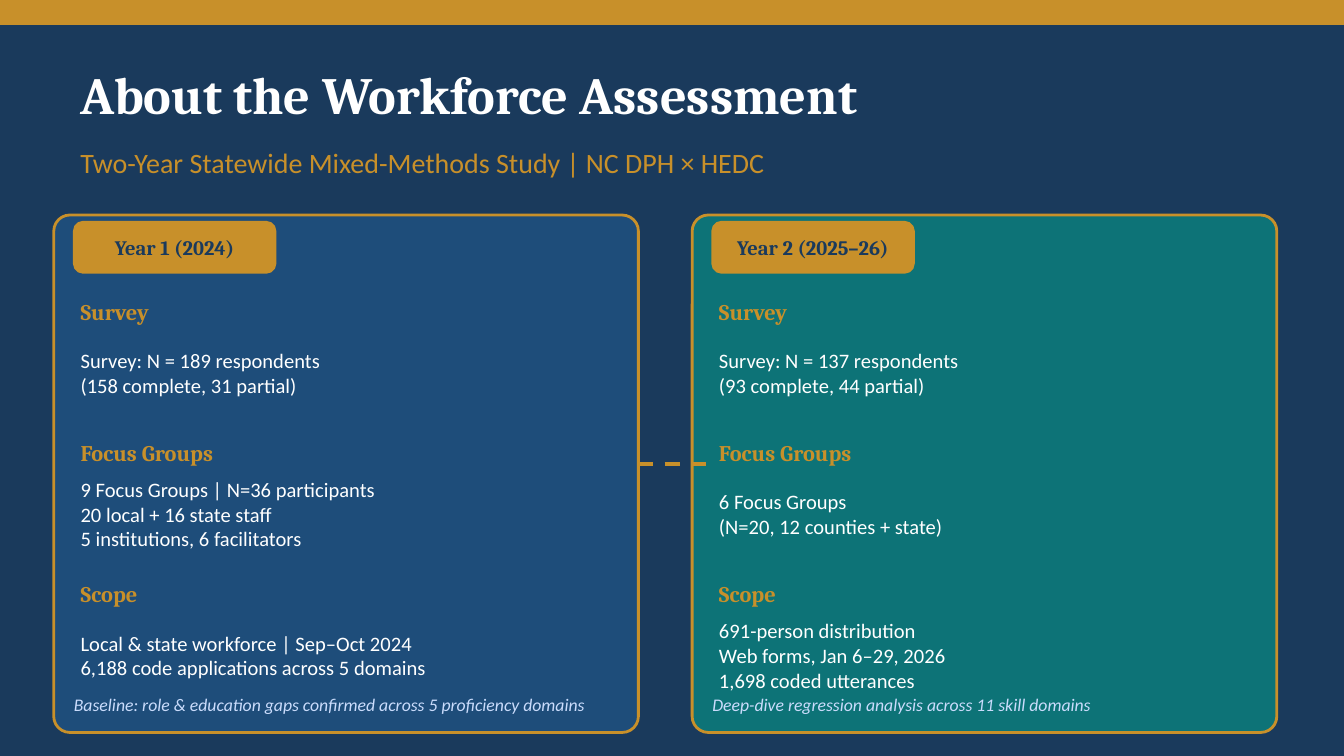
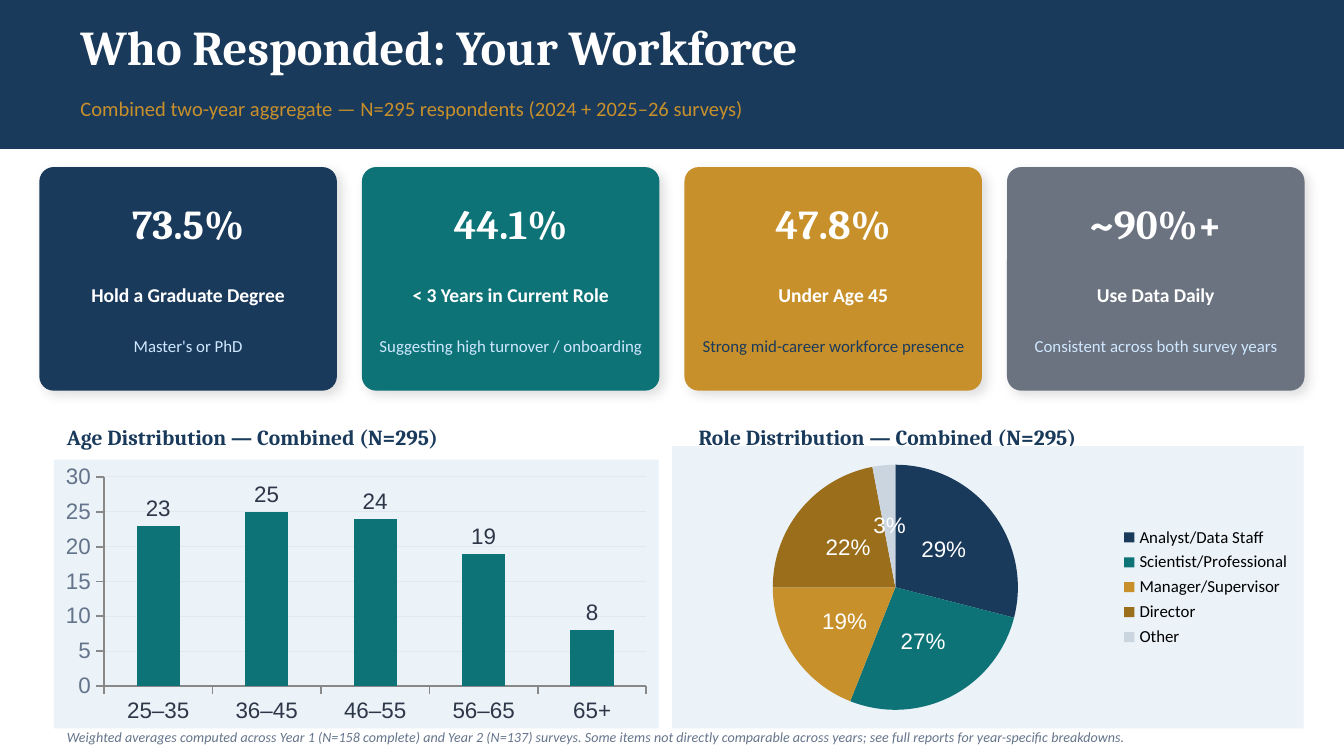
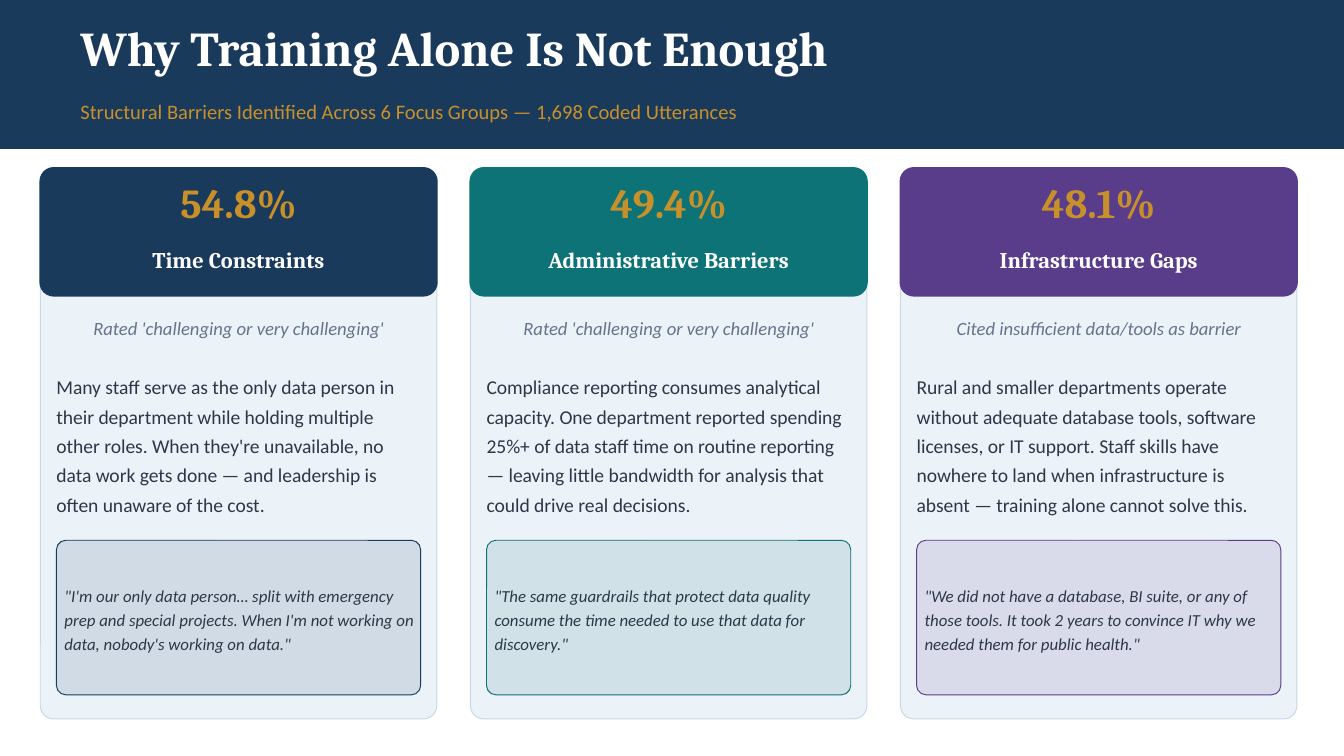
from dataclasses import dataclass, replace
from typing import NamedTuple, Optional

from lxml.etree import SubElement
from pptx import Presentation
from pptx.chart.data import CategoryChartData
from pptx.dml.color import RGBColor
from pptx.enum.chart import XL_CHART_TYPE as ChartType
from pptx.enum.chart import XL_LABEL_POSITION as LabelPosition
from pptx.enum.chart import XL_LEGEND_POSITION as LegendPosition
from pptx.enum.chart import XL_TICK_LABEL_POSITION as TickLabels
from pptx.enum.chart import XL_TICK_MARK as TickMark
from pptx.enum.dml import MSO_LINE_DASH_STYLE as Dash
from pptx.enum.shapes import MSO_CONNECTOR as Connector
from pptx.enum.shapes import MSO_SHAPE as Preset
from pptx.enum.text import MSO_ANCHOR as Anchor
from pptx.enum.text import PP_ALIGN as Align
from pptx.oxml import parse_xml
from pptx.oxml.ns import nsdecls, qn
from pptx.util import Pt

# Shared look
COLORS = {
    "navy": "1A3A5C", "blue": "1E4D7A", "teal": "0D7377", "gold": "C8902A",
    "bronze": "9A6E1A", "purple": "5A3D8A", "gray": "6B7280", "silver": "CBD5E0",
    "white": "FFFFFF", "black": "000000", "ink": "2D3748", "slate": "64748B",
    "panel": "EBF2F8", "panel_edge": "C8D8E8", "ice": "D0E8FF",
    "periwinkle": "CADCFC", "axis": "888888", "grid": "E2E8F0",
}
SERIF, SANS, CHART_FONT = "Cambria", "Calibri", "Arial"


class Area(NamedTuple):
    left: float
    top: float
    width: float
    height: float


@dataclass(frozen=True)
class Style:
    font: str
    size: float
    color: str
    bold: bool = False
    italic: bool = False
    align: Optional[Align] = None
    spacing: Optional[float] = None


TITLE = Style(SERIF, 26, "white", bold=True)
SUBTITLE = Style(SANS, 11, "gold")
BIG_NUMBER = Style(SERIF, 22, "white", bold=True, align=Align.CENTER)
CARD_NAME = Style(SERIF, 12, "white", bold=True, align=Align.CENTER)
BADGE = Style(SERIF, 11, "navy", bold=True, align=Align.CENTER)
SECTION = Style(SERIF, 12, "gold", bold=True)
SECTION_BODY = Style(SANS, 11, "white")
FINDING = Style(SANS, 9.5, "periwinkle", italic=True)
STAT_LABEL = Style(SANS, 10.5, "white", bold=True, align=Align.CENTER)
STAT_NOTE = Style(SANS, 9, "ice", align=Align.CENTER)
CHART_HEADING = Style(SERIF, 11.5, "navy", bold=True)
FOOTNOTE = Style(SANS, 7.5, "slate", italic=True)
RATING = Style(SANS, 10, "slate", italic=True, align=Align.CENTER)
BODY = Style(SANS, 10.5, "ink", spacing=1.25)
QUOTE = Style(SANS, 9, "ink", italic=True, spacing=1.2)


# Slide content
@dataclass(frozen=True)
class StudyYear:
    badge: str
    color: str
    sections: dict[str, str]
    finding: str


@dataclass(frozen=True)
class Stat:
    value: str
    label: str
    note: str
    color: str
    note_color: str = "ice"


@dataclass(frozen=True)
class Barrier:
    value: str
    name: str
    rating: str
    body: str
    quote: str
    color: str


STUDY_YEARS = [
    StudyYear("Year 1 (2024)", "blue", {
        "Survey": "Survey: N = 189 respondents\n(158 complete, 31 partial)",
        "Focus Groups": "9 Focus Groups | N=36 participants\n20 local + 16 state staff\n"
                        "5 institutions, 6 facilitators",
        "Scope": "Local & state workforce | Sep–Oct 2024\n"
                 "6,188 code applications across 5 domains",
    }, "Baseline: role & education gaps confirmed across 5 proficiency domains"),
    StudyYear("Year 2 (2025–26)", "teal", {
        "Survey": "Survey: N = 137 respondents\n(93 complete, 44 partial)",
        "Focus Groups": "6 Focus Groups\n(N=20, 12 counties + state)",
        "Scope": "691-person distribution\nWeb forms, Jan 6–29, 2026\n1,698 coded utterances",
    }, "Deep-dive regression analysis across 11 skill domains"),
]

STATS = [
    Stat("73.5%", "Hold a Graduate Degree", "Master's or PhD", "navy"),
    Stat("44.1%", "< 3 Years in Current Role", "Suggesting high turnover / onboarding", "teal"),
    Stat("47.8%", "Under Age 45", "Strong mid-career workforce presence", "gold", "navy"),
    Stat("~90%+", "Use Data Daily", "Consistent across both survey years", "gray"),
]
AGES = {"25–35": 23, "36–45": 25, "46–55": 24, "56–65": 19, "65+": 8}
ROLES = {"Analyst/Data Staff": 29, "Scientist/Professional": 27,
         "Manager/Supervisor": 19, "Director": 22, "Other": 3}
ROLE_COLORS = ["navy", "teal", "gold", "bronze", "silver"]

BARRIERS = [
    Barrier("54.8%", "Time Constraints", "Rated 'challenging or very challenging'",
            "Many staff serve as the only data person in their department while holding "
            "multiple other roles. When they're unavailable, no data work gets done — and "
            "leadership is often unaware of the cost.",
            "\"I'm our only data person… split with emergency prep and special projects. "
            "When I'm not working on data, nobody's working on data.\"", "navy"),
    Barrier("49.4%", "Administrative Barriers", "Rated 'challenging or very challenging'",
            "Compliance reporting consumes analytical capacity. One department reported "
            "spending 25%+ of data staff time on routine reporting — leaving little "
            "bandwidth for analysis that could drive real decisions.",
            "\"The same guardrails that protect data quality consume the time needed to "
            "use that data for discovery.\"", "teal"),
    Barrier("48.1%", "Infrastructure Gaps", "Cited insufficient data/tools as barrier",
            "Rural and smaller departments operate without adequate database tools, "
            "software licenses, or IT support. Staff skills have nowhere to land when "
            "infrastructure is absent — training alone cannot solve this.",
            "\"We did not have a database, BI suite, or any of those tools. It took 2 years "
            "to convince IT why we needed them for public health.\"", "purple"),
]


# Drawing helpers
def rgb(name: str) -> RGBColor:
    return RGBColor.from_string(COLORS[name])


def set_font(font, name: str, size: float, color: str) -> None:
    font.name, font.size = name, Pt(size)
    font.color.rgb = rgb(color)


def write(box, text: str, style: Style, padded: bool = False) -> None:
    frame = box.text_frame
    frame.word_wrap = True
    frame.vertical_anchor = Anchor.MIDDLE
    if not padded:
        frame.margin_left = frame.margin_right = frame.margin_top = frame.margin_bottom = 0
    frame.text = text
    for para in frame.paragraphs:
        para.alignment = style.align
        para.line_spacing = style.spacing
        set_font(para.font, style.font, style.size, style.color)
        para.font.bold, para.font.italic = style.bold, style.italic


def add_text(page, area: Area, text: str, style: Style, padded: bool = False) -> None:
    write(page.shapes.add_textbox(*map(Pt, area)), text, style, padded)


def add_panel(page, area: Area, fill: str, line: Optional[str] = None,
              line_width: float = 1, radius: float = 0, opacity: int = 100):
    preset = Preset.ROUNDED_RECTANGLE if radius else Preset.RECTANGLE
    panel = page.shapes.add_shape(preset, *map(Pt, area))
    if radius:
        panel.adjustments[0] = radius / min(area.width, area.height)
    panel.shadow.inherit = False
    panel.fill.solid()
    panel.fill.fore_color.rgb = rgb(fill)
    if opacity < 100:
        color = panel.element.spPr.find(qn("a:solidFill"))[0]
        SubElement(color, qn("a:alpha")).set("val", str(opacity * 1000))
    panel.line.color.rgb = rgb(line or fill)
    panel.line.width = Pt(line_width)
    return panel


def add_soft_shadow(panel) -> None:
    effects = panel.element.spPr.find(qn("a:effectLst"))
    effects.append(parse_xml(
        f'<a:outerShdw {nsdecls("a")} blurRad="{Pt(6)}" dist="{Pt(3)}" dir="2700000" '
        f'algn="bl" rotWithShape="0"><a:srgbClr val="{COLORS["black"]}">'
        '<a:alpha val="13000"/></a:srgbClr></a:outerShdw>'))


def add_page(deck, background: str):
    page = deck.slides.add_slide(deck.slide_layouts[6])
    page.background.fill.solid()
    page.background.fill.fore_color.rgb = rgb(background)
    return page


def add_banded_page(deck, title: str, subtitle: str, title_area: Area):
    page = add_page(deck, "white")
    add_panel(page, Area(0, 0, 720, 79.2), "navy")
    add_text(page, title_area, title, TITLE, padded=True)
    subtitle_top = title_area.top + title_area.height
    add_text(page, Area(36, subtitle_top, 648, 25.2), subtitle, SUBTITLE, padded=True)
    return page


def add_panel_chart(page, kind: ChartType, area: Area, values: dict[str, int]):
    data = CategoryChartData()
    data.categories = list(values)
    data.add_series("Series 1", list(values.values()))
    chart = page.shapes.add_chart(kind, *map(Pt, area), data).chart
    chart.has_title = chart.has_legend = False
    set_font(chart.font, SANS, 10, "black")
    chart.element.find(qn("c:chart")).addnext(parse_xml(
        f'<c:spPr {nsdecls("c", "a")}><a:solidFill><a:srgbClr val="{COLORS["panel"]}"/>'
        '</a:solidFill><a:ln><a:noFill/></a:ln></c:spPr>'))
    return chart


def add_labels(plot, color: str, number_format: str, position: LabelPosition):
    plot.has_data_labels = True
    labels = plot.data_labels
    set_font(labels.font, CHART_FONT, 12, color)
    labels.number_format, labels.number_format_is_linked = number_format, False
    labels.position = position
    return labels


# Slide 1: the two study years
def add_study_year(page, year: StudyYear, left: float) -> None:
    add_panel(page, Area(left, 115.2, 313.2, 277.2), year.color, "gold", 1.5, radius=8.64)
    badge = add_panel(page, Area(left + 10.8, 118.8, 108, 27.36), "gold", radius=5.04)
    write(badge, year.badge, BADGE)
    for row, (heading, body) in enumerate(year.sections.items()):
        top = 156.96 + 75.6 * row
        add_text(page, Area(left + 14.4, top, 280.8, 20.16), heading, SECTION)
        add_text(page, Area(left + 14.4, top + 19.44, 280.8, 46.8), body, SECTION_BODY)
    add_text(page, Area(left + 10.8, 365.76, 291.6, 23.04), year.finding, FINDING)


def build_about(deck) -> None:
    page = add_page(deck, "navy")
    add_panel(page, Area(0, 0, 720, 12.96), "gold")
    add_text(page, Area(36, 25.2, 648, 50.4), "About the Workforce Assessment",
             replace(TITLE, size=28), padded=True)
    add_text(page, Area(36, 72, 648, 30.24),
             "Two-Year Statewide Mixed-Methods Study | NC DPH × HEDC",
             replace(SUBTITLE, size=15), padded=True)
    for column, year in enumerate(STUDY_YEARS):
        add_study_year(page, year, 28.8 + 342 * column)
    link = page.shapes.add_connector(Connector.STRAIGHT, Pt(342), Pt(248.4), Pt(378), Pt(248.4))
    link.line.color.rgb = rgb("gold")
    link.line.width = Pt(2)
    link.line.dash_style = Dash.DASH
    SubElement(link.element.spPr, qn("a:effectLst"))


# Slide 2: respondents
def add_stat(page, stat: Stat, left: float) -> None:
    add_soft_shadow(add_panel(page, Area(left, 90, 158.4, 118.8), stat.color, radius=7.2))
    add_text(page, Area(left, 93.6, 158.4, 51.84), stat.value, BIG_NUMBER)
    add_text(page, Area(left, 144, 158.4, 27.36), stat.label, STAT_LABEL)
    add_text(page, Area(left, 169.92, 158.4, 30.24), stat.note,
             replace(STAT_NOTE, color=stat.note_color))


def add_age_chart(page) -> None:
    chart = add_panel_chart(page, ChartType.COLUMN_CLUSTERED, Area(28.8, 246.24, 324, 144), AGES)
    plot = chart.plots[0]
    plot.gap_width, plot.vary_by_categories = 150, False
    bars = plot.series[0].format.fill
    bars.solid()
    bars.fore_color.rgb = rgb("teal")
    add_labels(plot, "ink", "#,##0", LabelPosition.OUTSIDE_END)
    for axis, color in ((chart.category_axis, "ink"), (chart.value_axis, "slate")):
        axis.major_tick_mark, axis.minor_tick_mark = TickMark.OUTSIDE, TickMark.NONE
        set_font(axis.tick_labels.font, CHART_FONT, 12, color)
        axis.format.line.color.rgb = rgb("axis")
        axis.format.line.width = Pt(1)
    chart.category_axis.tick_label_position = TickLabels.LOW
    scale = chart.value_axis
    scale.minimum_scale, scale.maximum_scale, scale.major_unit = 0, 30, 5
    scale.has_major_gridlines = True
    scale.major_gridlines.format.line.color.rgb = rgb("grid")
    scale.major_gridlines.format.line.width = Pt(0.5)


def add_role_chart(page) -> None:
    chart = add_panel_chart(page, ChartType.PIE, Area(360, 239.04, 338.4, 151.2), ROLES)
    plot = chart.plots[0]
    for index, color in enumerate(ROLE_COLORS):
        fill = plot.series[0].points[index].format.fill
        fill.solid()
        fill.fore_color.rgb = rgb(color)
    labels = add_labels(plot, "white", "0%", LabelPosition.CENTER)
    labels.show_percentage, labels.show_value = True, False
    chart.has_legend = True
    chart.legend.position = LegendPosition.RIGHT
    chart.legend.include_in_layout = False
    set_font(chart.legend.font, SANS, 9, "black")


def build_respondents(deck) -> None:
    page = add_banded_page(
        deck, "Who Responded: Your Workforce",
        "Combined two-year aggregate — N=295 respondents (2024 + 2025–26 surveys)",
        Area(36, 3.6, 612, 41.76))
    for column, stat in enumerate(STATS):
        add_stat(page, stat, 21.6 + 172.8 * column)
    for topic, left in (("Age", 28.8), ("Role", 367.2)):
        add_text(page, Area(left, 223.2, 331.2, 21.6),
                 f"{topic} Distribution — Combined (N=295)", CHART_HEADING, padded=True)
    add_age_chart(page)
    add_role_chart(page)
    add_text(page, Area(28.8, 387.36, 662.4, 14.4),
             "Weighted averages computed across Year 1 (N=158 complete) and Year 2 (N=137) "
             "surveys. Some items not directly comparable across years; see full reports for "
             "year-specific breakdowns.", FOOTNOTE, padded=True)


# Slide 3: structural barriers
def add_barrier(page, barrier: Barrier, left: float) -> None:
    add_panel(page, Area(left, 90, 212.4, 295.2), "panel", "panel_edge", 0.5, radius=7.2)
    add_panel(page, Area(left, 90, 212.4, 68.4), barrier.color, radius=7.2)
    add_text(page, Area(left + 7.2, 92.16, 198, 32.4), barrier.value,
             replace(BIG_NUMBER, color="gold"))
    add_text(page, Area(left + 7.2, 123.84, 198, 30.24), barrier.name, CARD_NAME)
    add_text(page, Area(left + 7.2, 164.16, 198, 23.04), barrier.rating, RATING)
    add_text(page, Area(left + 8.64, 188.64, 195.12, 97.2), barrier.body, BODY)
    add_panel(page, Area(left + 8.64, 289.44, 195.12, 82.8), barrier.color,
              line_width=0.5, radius=5.04, opacity=12)
    add_text(page, Area(left + 12.96, 293.04, 187.2, 75.6), barrier.quote, QUOTE)


def build_barriers(deck) -> None:
    page = add_banded_page(
        deck, "Why Training Alone Is Not Enough",
        "Structural Barriers Identified Across 6 Focus Groups — 1,698 Coded Utterances",
        Area(36, 3.6, 648, 43.2))
    for column, barrier in enumerate(BARRIERS):
        add_barrier(page, barrier, 21.6 + 230.4 * column)


def main() -> None:
    deck = Presentation()
    deck.slide_width, deck.slide_height = Pt(720), Pt(405)
    build_about(deck)
    build_respondents(deck)
    build_barriers(deck)
    deck.save("out.pptx")


if __name__ == "__main__":
    main()
